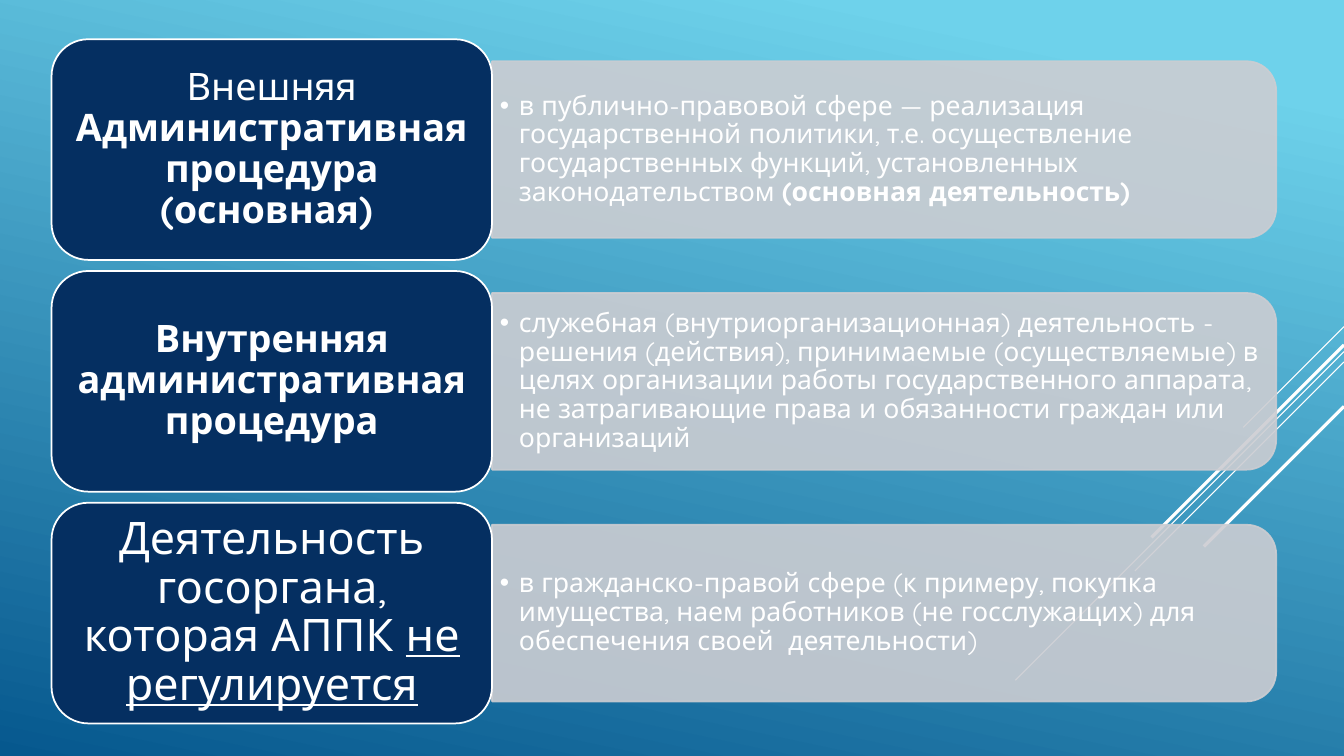
"""Build a slide that sets three kinds of state activity beside their descriptions."""
from lxml.etree import SubElement as Sub
from pptx import Presentation
from pptx.dml.color import RGBColor as Rgb
from pptx.enum.shapes import MSO_CONNECTOR as Link, MSO_SHAPE as Form
from pptx.enum.text import MSO_ANCHOR as Anchor, PP_ALIGN as Align
from pptx.oxml.ns import qn
from pptx.util import Cm, Pt

HUES = {"sky": "6ED2EB", "sea": "06588E", "navy": "052F61",
        "grey": "CCCDD2", "white": "FFFFFF"}
TONE = {name: Rgb.from_string(code) for name, code in HUES.items()}


def write(shape, runs, size, align=Align.LEFT, pad=(0.2, 0.1), bullet=False):
    """Fill a shape with one paragraph of (text, style) runs."""
    frame = shape.text_frame
    frame.word_wrap = True
    frame.vertical_anchor = Anchor.MIDDLE
    frame.margin_left = frame.margin_right = Cm(pad[0])
    frame.margin_top = frame.margin_bottom = Cm(pad[1])
    para = frame.paragraphs[0]
    para.alignment = align
    para.line_spacing = 0.9
    if bullet:
        props = para._p.get_or_add_pPr()
        props.set("marL", str(Cm(0.48)))
        props.set("indent", str(-Cm(0.48)))
        Sub(props, qn("a:buFont"), typeface="Arial")
        Sub(props, qn("a:buChar"), char="•")
    for text, style in runs:
        run = para.add_run()
        run.text = text
        run.font.name = "Quicksand"
        run.font.size = Pt(size)
        run.font.color.rgb = TONE["white"]
        if style:
            setattr(run.font, style, True)


def paint(shape, fill, line):
    """Give a shape its fill and outline, without a shadow."""
    shape.shadow.inherit = False
    shape.fill.solid()
    shape.fill.fore_color.rgb = TONE[fill]
    shape.line.color.rgb = TONE[line]
    shape.line.width = Pt(1.25)


deck = Presentation()
deck.slide_width, deck.slide_height = Cm(33.87), Cm(19.05)
slide = deck.slides.add_slide(deck.slide_layouts[6])
shapes = slide.shapes

back = slide.background.fill
back.gradient()
back.gradient_angle = 258
for stop, name, place in zip(back.gradient_stops, ("sky", "sea"), (0.1, 1)):
    stop.color.rgb = TONE[name]
    stop.position = place

EDGE = 33.87
RAYS = [(8.23, 2.54, 0.75), (8.86, 8.28, 0.75), (9.12, 5.27, 0.75),
        (8.69, 4.85, 2.25), (10.24, 3.53, 2.25)]
for top, reach, width in RAYS:
    ray = shapes.add_connector(Link.STRAIGHT, Cm(EDGE), Cm(top),
                               Cm(EDGE - reach), Cm(top + reach))
    ray.line.color.rgb = TONE["white"]
    ray.line.width = Pt(width)
    Sub(ray._element.spPr, qn("a:effectLst"))

ROWS = [
    ([("Внешняя ", None), ("Административная процедура (основная) ", "bold")],
     27, (0.28, 0.15),
     [("в публично-правовой сфере — реализация государственной политики, "
       "т.е. осуществление государственных функций, установленных "
       "законодательством ", None), ("(основная деятельность)", "bold")]),
    ([("Внутренняя административная процедура", "bold")],
     27, (0.28, 0.15),
     [("служебная (внутриорганизационная) деятельность - решения (действия), "
       "принимаемые (осуществляемые) в целях организации работы "
       "государственного аппарата, не затрагивающие права и обязанности "
       "граждан или организаций", None)]),
    ([("Деятельность госоргана, которая АППК ", None),
      ("не регулируется", "underline")],
     32, (0.33, 0.18),
     [("в гражданско-правой сфере (к примеру, покупка имущества, наем "
       "работников (не госслужащих) для обеспечения своей  деятельности)",
       None)]),
]
LEFT, WIDE, HIGH = 1.3, 11.1, 5.56
SPAN, DEEP = 19.76, 4.45
SIDE = LEFT + WIDE

for row, (head, size, pad, note) in enumerate(ROWS):
    mid = 3.77 + 5.84 * row

    panel = shapes.add_shape(Form.ROUND_2_SAME_RECTANGLE,
                             Cm(SIDE + (SPAN - DEEP) / 2), Cm(mid - SPAN / 2),
                             Cm(DEEP), Cm(SPAN))
    panel.rotation = 90
    paint(panel, "grey", "grey")
    for tint in panel._element.spPr.iter(qn("a:srgbClr")):
        Sub(tint, qn("a:alpha"), val="90000")

    label = shapes.add_textbox(Cm(SIDE), Cm(mid - 2), Cm(19.53), Cm(4))
    write(label, note, 19, bullet=True)

    box = shapes.add_shape(Form.ROUNDED_RECTANGLE, Cm(LEFT), Cm(mid - HIGH / 2),
                           Cm(WIDE), Cm(HIGH))
    paint(box, "navy", "white")
    write(box, head, size, align=Align.CENTER, pad=pad)

deck.save("out.pptx")
